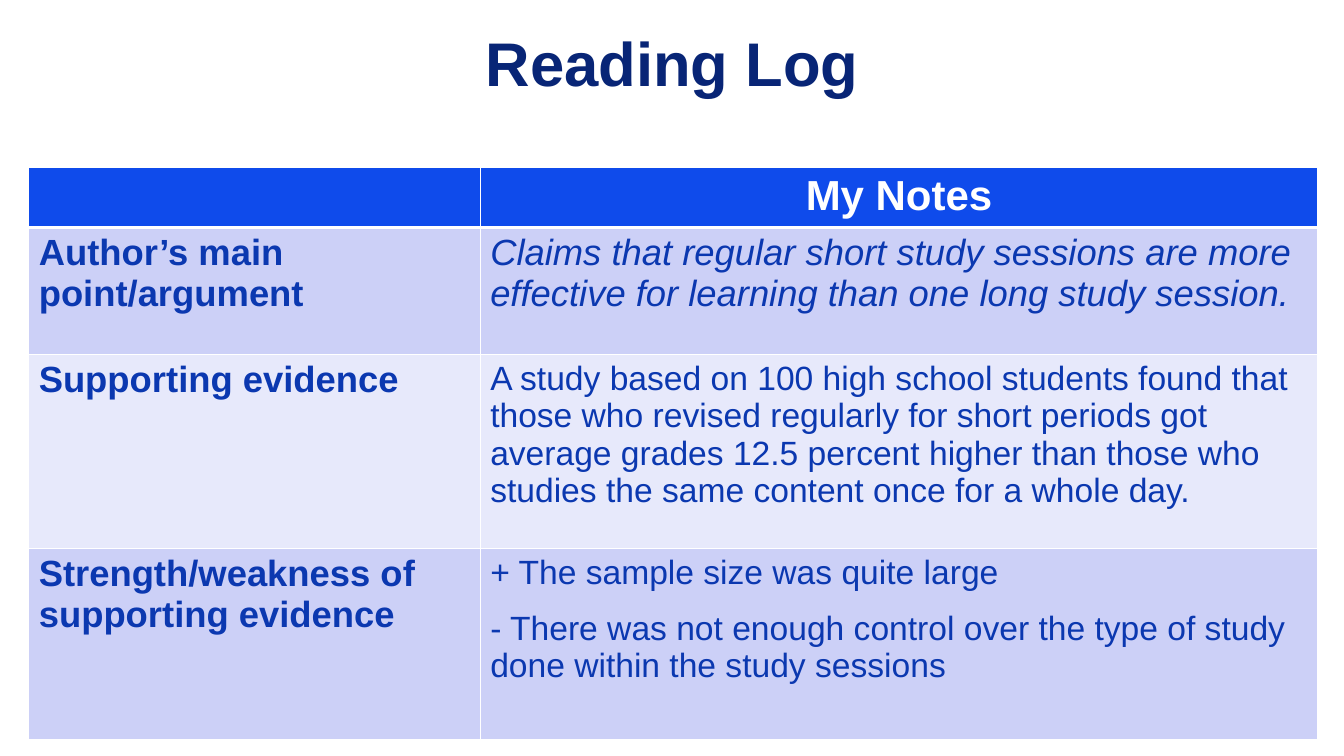
from lxml.etree import SubElement
from pptx import Presentation
from pptx.dml.color import RGBColor
from pptx.enum.text import MSO_ANCHOR, PP_ALIGN
from pptx.oxml.ns import qn
from pptx.util import Pt

NAVY, BLUE, INK, WHITE = "082576", "0F4BEB", "0B38B0", "FFFFFF"
BANDS = ["CCD0F7", "E7E9FB"]


def color(hex_string):
    return RGBColor.from_string(hex_string)


def add_text(paragraph, text, size, hex_string, bold=False, italic=False):
    run = paragraph.add_run()
    run.text = text
    run.font.name = "Arial"
    run.font.size = Pt(size)
    run.font.bold = bold
    run.font.italic = italic
    run.font.color.rgb = color(hex_string)


prs = Presentation()
prs.slide_width, prs.slide_height = Pt(960), Pt(540)
slide = prs.slides.add_slide(prs.slide_layouts[6])

# Reading log: label, note paragraphs, note size, note italic
entries = [
    ("Author’s main point/argument",
     ["Claims that regular short study sessions are more effective for "
      "learning than one long study session."], 26, True),
    ("Supporting evidence",
     ["A study based on 100 high school students found that those who "
      "revised regularly for short periods got average grades 12.5 percent "
      "higher than those who studies the same content once for a whole day."],
     24, False),
    ("Strength/weakness of supporting evidence",
     ["+ The sample size was quite large",
      "- There was not enough control over the type of study done within "
      "the study sessions"], 24, False),
]
column_widths = [322.5, 598.5]
row_heights = [43, 91, 138.5, 136.5]
log = slide.shapes.add_table(len(row_heights), 2, Pt(20.5), Pt(119.5),
                             Pt(sum(column_widths)), Pt(sum(row_heights))).table
for column, width in zip(log.columns, column_widths):
    column.width = Pt(width)
for row, height in zip(log.rows, row_heights):
    row.height = Pt(height)

# White borders, thicker below the header, and banded fills
for row_index, row in enumerate(log.rows):
    for cell in row.cells:
        cell_props = cell._tc.get_or_add_tcPr()
        for side in ("L", "R", "T", "B"):
            under_header = (row_index, side) in ((0, "B"), (1, "T"))
            border = SubElement(cell_props, qn(f"a:ln{side}"),
                                w=str(Pt(3 if under_header else 1)))
            border_fill = SubElement(border, qn("a:solidFill"))
            SubElement(border_fill, qn("a:srgbClr"), val=WHITE)
        cell.fill.solid()
        cell.fill.fore_color.rgb = color(BANDS[(row_index - 1) % 2] if row_index else BLUE)

# Header
notes_heading = log.cell(0, 1).text_frame.paragraphs[0]
notes_heading.alignment = PP_ALIGN.CENTER
add_text(notes_heading, "My Notes", 30, WHITE, bold=True)

# Entries
for row_index, (label, notes, size, italic) in enumerate(entries, start=1):
    add_text(log.cell(row_index, 0).text_frame.paragraphs[0], label, 26, INK, bold=True)
    notes_frame = log.cell(row_index, 1).text_frame
    for note_index, note in enumerate(notes):
        paragraph = notes_frame.add_paragraph() if note_index else notes_frame.paragraphs[0]
        if note_index:
            paragraph.space_before = Pt(13.4)
        add_text(paragraph, note, size, INK, italic=italic)

# Title
title = slide.shapes.add_textbox(Pt(184.3), Pt(13.7), Pt(592), Pt(60.5)).text_frame
title.word_wrap = True
title.vertical_anchor = MSO_ANCHOR.MIDDLE
title.paragraphs[0].alignment = PP_ALIGN.CENTER
add_text(title.paragraphs[0], "Reading Log", 44, NAVY, bold=True)

prs.save("out.pptx")
